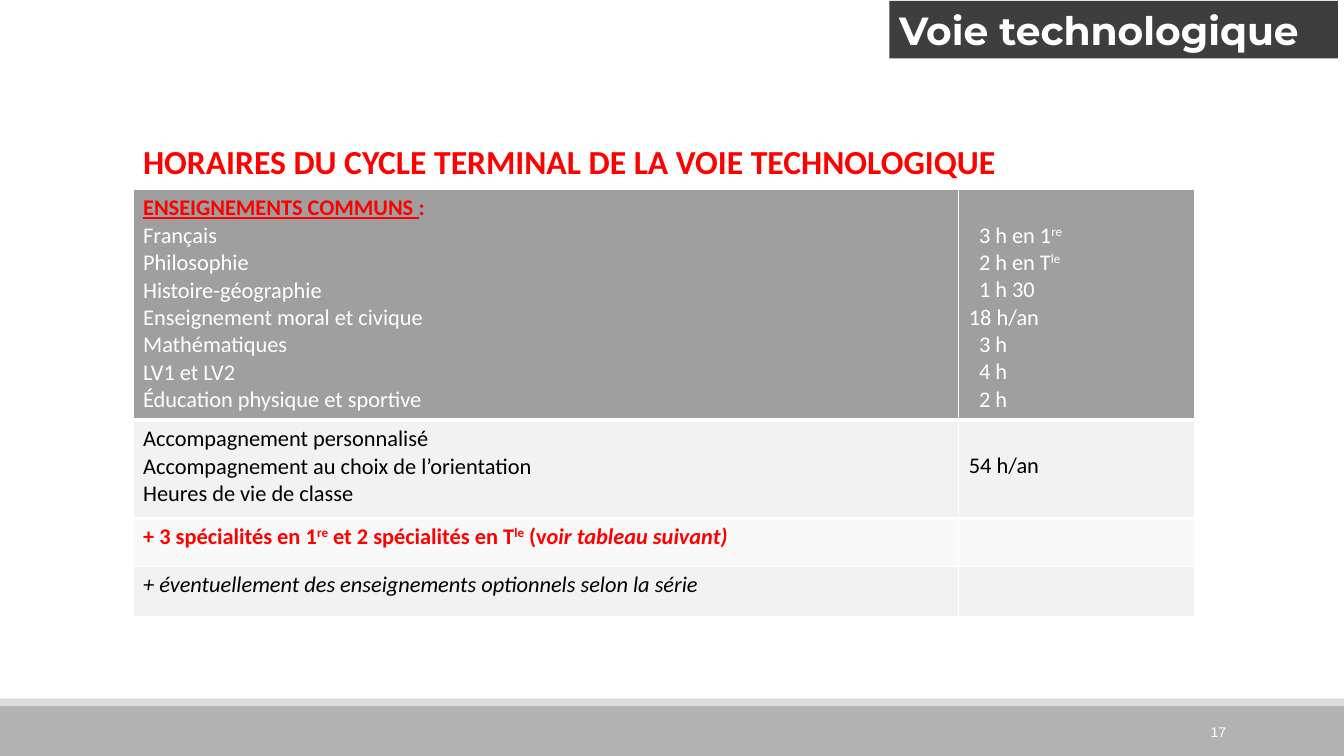
from lxml import etree
from pptx import Presentation
from pptx.dml.color import RGBColor
from pptx.enum.shapes import MSO_SHAPE as Shape
from pptx.enum.text import MSO_ANCHOR as Anchor, PP_ALIGN as Align
from pptx.oxml.ns import qn
from pptx.util import Inches, Pt

WHITE = RGBColor(0xFF, 0xFF, 0xFF)
BLACK = RGBColor(0, 0, 0)
RED = RGBColor(0xFF, 0, 0)
CHARCOAL = RGBColor(0x3E, 0x3E, 0x3E)
FOOTER = RGBColor(0xB2, 0xB2, 0xB2)
FOOTER_EDGE = RGBColor(0xDD, 0xDD, 0xDD)
HEADER_ROW = RGBColor(0x9F, 0x9F, 0x9F)
BAND = RGBColor(0xF2, 0xF2, 0xF2)
LIGHT_BAND = RGBColor(0xF9, 0xF9, 0xF9)

WIDTH, HEIGHT = 13.33, 7.5
TABLE_LEFT, TABLE_TOP = 1.32, 1.88
COLUMNS = [8.19, 2.34]
ROWS = [2.29, 0.97, 0.48, 0.5]
LINE = 0.27     # height of one table line
HOUR_INDENT = 0.1

presentation = Presentation()
presentation.slide_width, presentation.slide_height = Inches(WIDTH), Inches(HEIGHT)
slide = presentation.slides.add_slide(presentation.slide_layouts[6])


def add_run(paragraph, text, size, color, style="", font="Calibri"):
    """Style letters: b bold, i italic, u underlined, s superscript."""
    run = paragraph.add_run()
    run.text = text
    run.font.size, run.font.name = Pt(size), font
    run.font.color.rgb = color
    run.font.bold, run.font.italic = "b" in style, "i" in style
    run.font.underline = "u" in style
    if "s" in style:
        run.font._element.set("baseline", "30000")


def add_bar(left, top, width, height, color):
    bar = slide.shapes.add_shape(
        Shape.RECTANGLE, Inches(left), Inches(top), Inches(width), Inches(height))
    bar.shadow.inherit = False
    bar.fill.solid()
    bar.fill.fore_color.rgb = color
    bar.line.fill.background()
    return bar


# Footer bands
add_bar(0, 7, WIDTH, 0.5, FOOTER)
add_bar(0, 6.93, WIDTH, 0.07, FOOTER_EDGE)

# Table content: each cell is a list of lines, each line a list of (text, colour, style)
subjects = ["Français", "Philosophie", "Histoire-géographie", "Enseignement moral et civique",
            "Mathématiques", "LV1 et LV2", "Éducation physique et sportive"]
hours = [("3 h en 1", "re"), ("2 h en T", "le"), ("1 h 30",), ("18 h/an",),
         ("3 h",), ("4 h",), ("2 h",)]
support = ["Accompagnement personnalisé", "Accompagnement au choix de l’orientation",
           "Heures de vie de classe"]
common_lines = [[("ENSEIGNEMENTS COMMUNS ", RED, "bu"), (":", RED, "b")]]
common_lines += [[(subject, WHITE, "")] for subject in subjects]
hour_lines = [[(text, WHITE, style) for text, style in zip(parts, ("", "s"))] for parts in hours]
support_lines = [[(text, BLACK, "")] for text in support]
speciality_line = [
    ("+ 3 spécialités en 1", RED, "b"), ("re", RED, "bs"),
    (" et 2 spécialités en T", RED, "b"), ("le", RED, "bs"),
    (" (v", RED, "b"), ("oir tableau suivant)", RED, "bi")]
optional_line = [
    ("+ éventuellement des enseignements optionnels selon la série", BLACK, "i")]
content = [
    (HEADER_ROW, common_lines, hour_lines),
    (BAND, support_lines, [[("54 h/an", BLACK, "")]]),
    (LIGHT_BAND, [speciality_line], []),
    (BAND, [optional_line], []),
]

# Timetable
table = slide.shapes.add_table(
    len(ROWS), len(COLUMNS), Inches(TABLE_LEFT), Inches(TABLE_TOP),
    Inches(sum(COLUMNS)), Inches(sum(ROWS))).table
for column, width in zip(table.columns, COLUMNS):
    column.width = Inches(width)
for row, height in zip(table.rows, ROWS):
    row.height = Inches(height)

for row_index, (fill, *cells) in enumerate(content):
    for column_index, lines in enumerate(cells):
        cell = table.cell(row_index, column_index)
        # Hours start one line lower than the subjects
        cell.margin_top = Inches(0.05 + LINE * (column_index == 1 and bool(lines)))
        properties = cell._tc.get_or_add_tcPr()
        for side in ("lnL", "lnR", "lnT", "lnB"):
            thick = (row_index, side) in ((0, "lnB"), (1, "lnT"))
            border = etree.SubElement(properties, qn(f"a:{side}"), w=str(Pt(3 if thick else 1)))
            solid = etree.SubElement(border, qn("a:solidFill"))
            etree.SubElement(solid, qn("a:srgbClr"), val=str(WHITE))
        cell.fill.solid()
        cell.fill.fore_color.rgb = fill
        for index, line in enumerate(lines):
            frame = cell.text_frame
            paragraph = frame.add_paragraph() if index else frame.paragraphs[0]
            for text, color, style in line:
                add_run(paragraph, text, 16, color, style)
            # Single-digit hours align with the units of the longer figures
            if lines is hour_lines and line[0][0][1] == " ":
                paragraph._p.get_or_add_pPr().set("marL", str(Inches(HOUR_INDENT)))

# Heading above the table
heading = slide.shapes.add_textbox(
    Inches(TABLE_LEFT), Inches(1.35), Inches(WIDTH - TABLE_LEFT), Inches(0.51))
heading.text_frame.word_wrap = True
add_run(heading.text_frame.paragraphs[0],
        "HORAIRES DU CYCLE TERMINAL DE LA VOIE TECHNOLOGIQUE", 24, RED, "b")

# Slide number
number = slide.shapes.add_textbox(Inches(10.83), Inches(7.06), Inches(1.43), Inches(0.4))
number.text_frame.word_wrap = True
number.text_frame.vertical_anchor = Anchor.MIDDLE
number.text_frame.paragraphs[0].alignment = Align.RIGHT
add_run(number.text_frame.paragraphs[0], "17", 10, WHITE, font="Arial")

# Section label
label = add_bar(8.82, 0.01, 4.45, 0.57, CHARCOAL)
label.text_frame.vertical_anchor = Anchor.TOP
label.text_frame.paragraphs[0].alignment = Align.LEFT
add_run(label.text_frame.paragraphs[0], "Voie technologique", 28, WHITE, "b", "Montserrat")

presentation.save("out.pptx")
